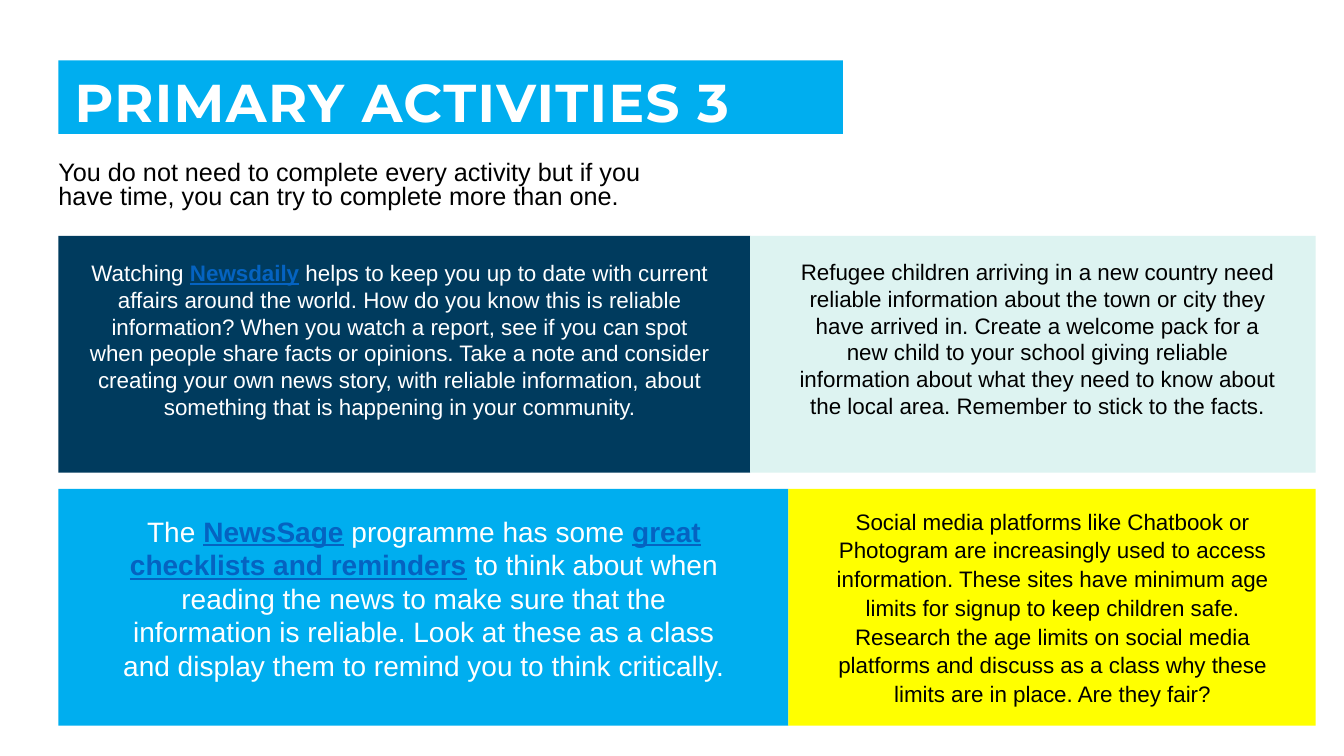
from typing import NamedTuple

from pptx import Presentation
from pptx import util as u
from pptx.dml import color
from pptx.enum import shapes, text

SKY, NAVY, MINT, YELLOW = "00AEEF", "003B5E", "DDF3F1", "FFFF00"
WHITE, BLACK, LINK = "FFFFFF", "000000", "0563C1"
LEFT, RIGHT = 0.58, 13.05
HIGH = 2.35


class Box(NamedTuple):
    left: float
    top: float
    width: float
    height: float


class Card(NamedTuple):
    panel: Box
    fill: str
    body: Box
    words: str
    ink: str
    size: int = 16
    lines: float = 1.0


def row(top: float, split: float) -> tuple[Box, Box]:
    """Divide one row of the page into two touching panels."""
    return (Box(LEFT, top, split - LEFT, HIGH),
            Box(split, top, RIGHT - split, HIGH))


def rgb(code: str) -> color.RGBColor:
    return color.RGBColor.from_string(code)


def place(box: Box) -> list[u.Inches]:
    return [u.Inches(side) for side in box]


def panel(slide, box: Box, fill: str):
    shape = slide.shapes.add_shape(shapes.MSO_SHAPE.RECTANGLE, *place(box))
    shape.shadow.inherit = False
    shape.fill.solid()
    shape.fill.fore_color.rgb = rgb(fill)
    shape.line.fill.background()
    return shape


def write(shape, words: str, *, size: int, ink: str, font: str = "Arial",
          bold: bool = False, align=text.PP_ALIGN.CENTER, lines: float = 1.0,
          inset: tuple = (0.1, 0.05, 0.1, 0.05),
          anchor=text.MSO_ANCHOR.TOP, track: int = 0) -> None:
    """Fill a shape with one paragraph; words between asterisks look like links."""
    frame = shape.text_frame
    frame.word_wrap = True
    frame.vertical_anchor = anchor
    (frame.margin_left, frame.margin_top,
     frame.margin_right, frame.margin_bottom) = map(u.Inches, inset)
    para = frame.paragraphs[0]
    para.alignment = align
    para.line_spacing = lines
    for index, part in enumerate(words.split("*")):
        linked = index % 2 == 1
        run = para.add_run()
        run.text = part
        run.font.name = font
        run.font.size = u.Pt(size)
        run.font.bold = bold or linked
        run.font.underline = linked
        run.font.color.rgb = rgb(LINK if linked else ink)
        if track:
            run._r.get_or_add_rPr().set("spc", str(track))


def label(slide, box: Box, words: str, **style) -> None:
    write(slide.shapes.add_textbox(*place(box)), words, **style)


def main() -> None:
    deck = Presentation()
    deck.slide_width, deck.slide_height = u.Inches(13.33), u.Inches(7.5)
    slide = deck.slides.add_slide(deck.slide_layouts[6])

    title = panel(slide, Box(LEFT, 0.6, 7.78, 0.73), SKY)
    write(title, "PRIMARY ACTIVITIES 3", size=38, ink=WHITE, font="Montserrat",
          bold=True, align=text.PP_ALIGN.LEFT, lines=0.9, track=100,
          inset=(0.16, 0.16, 0.12, 0), anchor=text.MSO_ANCHOR.MIDDLE)
    label(slide, Box(LEFT, 1.56, 6.21, 0.62),
          "You do not need to complete every activity but if you have time, "
          "you can try to complete more than one.",
          size=18, ink=BLACK, align=text.PP_ALIGN.LEFT, lines=0.8,
          inset=(0, 0.05, 0.1, 0.05))

    watch, pack = row(2.34, 7.44)
    check, social = row(4.85, 7.82)
    cards = [
        Card(watch, NAVY, Box(0.78, 2.52, 6.37, 1.99),
             "Watching *Newsdaily* helps to keep you up to date with current "
             "affairs around the world. How do you know this is reliable "
             "information? When you watch a report, see if you can spot when "
             "people share facts or opinions. Take a note and consider creating "
             "your own news story, with reliable information, about something "
             "that is happening in your community.", WHITE),
        Card(pack, MINT, Box(7.82, 2.51, 4.94, 1.72),
             "Refugee children arriving in a new country need reliable "
             "information about the town or city they have arrived in. Create a "
             "welcome pack for a new child to your school giving reliable "
             "information about what they need to know about the local area. "
             "Remember to stick to the facts.", BLACK),
        Card(check, SKY, Box(0.99, 5.05, 6.43, 1.78),
             "The *NewsSage* programme has some *great checklists and "
             "reminders* to think about when reading the news to make sure that "
             "the information is reliable. Look at these as a class and display "
             "them to remind you to think critically.", WHITE, size=20),
        Card(social, YELLOW, Box(8.01, 4.97, 4.86, 2.1),
             "Social media platforms like Chatbook or Photogram are "
             "increasingly used to access information. These sites have minimum "
             "age limits for signup to keep children safe. Research the age "
             "limits on social media platforms and discuss as a class why these "
             "limits are in place. Are they fair?", BLACK, lines=1.07),
    ]
    for card in cards:
        panel(slide, card.panel, card.fill)
        label(slide, card.body, card.words, size=card.size, ink=card.ink,
              lines=card.lines)

    deck.save("out.pptx")


if __name__ == "__main__":
    main()
